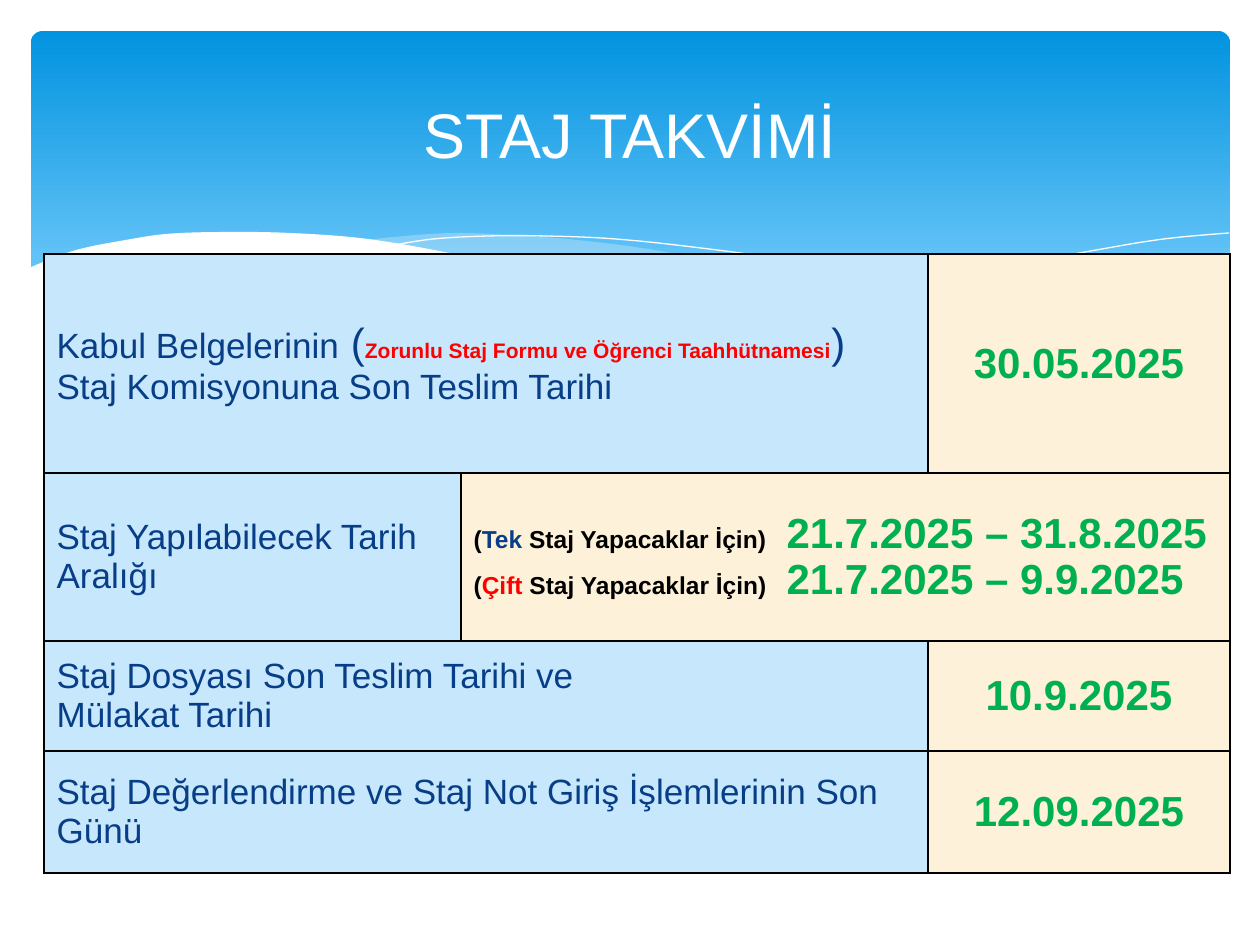
from lxml.etree import SubElement
from pptx import Presentation
from pptx.dml.color import RGBColor
from pptx.enum.shapes import MSO_SHAPE as Shape
from pptx.enum.text import MSO_ANCHOR as Anchor, PP_ALIGN as Align
from pptx.oxml import parse_xml
from pptx.oxml.ns import nsdecls, qn
from pptx.util import Emu, Pt

PX_PER_INCH = 126
FONT = "Arial"
COLORS = {
    "white": "FFFFFF", "black": "000000", "navy": "073E87", "red": "FF0000",
    "green": "00B050", "pale_blue": "C6E7FC", "cream": "FDF2D9",
    "sky_top": "0293E0", "sky_bottom": "83D3FE",
}

RIGHT_WAVE = [
    [(1229, 252), (1160, 265), (1085, 281), (982, 305), (833, 334)],
    [(833, 334), (906, 343), (984, 349), (1063, 349), (1130, 340), (1187, 326), (1229, 311)],
]
MIDDLE_WAVE = [
    [(1125, 344), (1017, 328), (934, 311), (793, 280), (717, 262), (648, 249),
     (586, 241), (529, 236), (455, 233), (394, 237), (360, 241)],
    [(360, 241), (431, 251), (509, 266), (619, 292), (736, 318), (838, 335),
     (927, 346), (1017, 350), (1080, 349), (1125, 344)],
]
LEFT_LINE = [[(389, 246), (433, 239), (488, 236), (546, 236), (616, 239), (701, 248),
              (801, 262), (916, 285), (1047, 316), (1143, 343)]]
RIGHT_LINE = [[(772, 324), (876, 296), (978, 272), (1091, 251), (1164, 239), (1229, 233)]]
WHITE_WAVE = [
    [(1231, 310), (1184, 326), (1133, 339), (1071, 347), (999, 348), (915, 343),
     (816, 330), (699, 309), (563, 277), (460, 255), (368, 239), (290, 233),
     (223, 232), (166, 234), (120, 241), (84, 248), (58, 256), (29, 268)],
    [(29, 415), (1231, 415)],
]

COLUMN_WIDTHS = [417, 467, 302]
ROW_HEIGHTS = [219, 168, 110, 122]


def px(value):
    return Emu(round(value * 914400 / PX_PER_INCH))


def color(name):
    return RGBColor.from_string(COLORS[name])


def label(text):
    return (text, 20, "navy", False)


def date(text):
    return (text, 24, "green", True)


def period(kind, kind_color, dates):
    return [("(", 14, "black", True), (kind, 14, kind_color, True),
            (" Staj Yapacaklar İçin)", 14, "black", True), date("\t" + dates)]


def smooth_curve(points, steps=6):
    padded = [points[0], *points, points[-1]]
    curve = [points[0]]
    for a, b, c, d in zip(padded, padded[1:], padded[2:], padded[3:]):
        for step in range(1, steps + 1):
            t = step / steps
            curve.append(tuple(
                0.5 * (2 * q + (r - p) * t + (2 * p - 5 * q + 4 * r - s) * t ** 2
                       + (3 * q - p - 3 * r + s) * t ** 3)
                for p, q, r, s in zip(a, b, c, d)))
    return curve


def add_curve(slide, parts, fill=None, opacity=100):
    points = [(px(x), px(y)) for part in parts for x, y in smooth_curve(part)]
    builder = slide.shapes.build_freeform(*points[0], scale=1)
    builder.add_line_segments(points[1:], close=fill is not None)
    shape = builder.convert_to_shape()
    shape.shadow.inherit = False
    if fill is None:
        shape.fill.background()
        shape.line.color.rgb = color("white")
        shape.line.width = Pt(0)
        return
    shape.line.fill.background()
    shape.fill.solid()
    shape.fill.fore_color.rgb = color(fill)
    if opacity < 100:
        srgb = next(shape.element.spPr.iter(qn("a:srgbClr")))
        SubElement(srgb, qn("a:alpha")).set("val", str(opacity * 1000))


def add_banner(slide):
    banner = slide.shapes.add_shape(Shape.ROUNDED_RECTANGLE, px(31), px(31), px(1199), px(340))
    banner.adjustments[0] = 0.034
    banner.shadow.inherit = False
    banner.line.fill.background()
    banner.fill.gradient()
    banner.fill.gradient_angle = 270
    stops = zip(banner.fill.gradient_stops, ("sky_top", "sky_bottom"), (0, 0.9))
    for stop, name, position in stops:
        stop.color.rgb = color(name)
        stop.position = position


def write_runs(paragraph, runs):
    for text, size, name, bold in runs:
        run = paragraph.add_run()
        run.text = text
        run.font.name = FONT
        run.font.size = Pt(size)
        run.font.bold = bold
        run.font.color.rgb = color(name)


def add_title(slide, text):
    box = slide.shapes.add_textbox(px(63), px(47), px(1134), px(173))
    frame = box.text_frame
    frame.word_wrap = True
    frame.vertical_anchor = Anchor.MIDDLE
    paragraph = frame.paragraphs[0]
    paragraph.alignment = Align.CENTER
    write_runs(paragraph, [(text, 36, "white", False)])


def set_borders(cell):
    properties = cell._tc.get_or_add_tcPr()
    for index, side in enumerate("LRTB"):
        properties.insert(index, parse_xml(
            f'<a:ln{side} {nsdecls("a")} w="{Pt(1)}"><a:solidFill>'
            f'<a:srgbClr val="{COLORS["black"]}"/></a:solidFill></a:ln{side}>'))


def set_tab_stop(paragraph, position):
    tabs = SubElement(paragraph._p.get_or_add_pPr(), qn("a:tabLst"))
    SubElement(tabs, qn("a:tab"), pos=str(px(position)), algn="l")


def fill_cell(cell, paragraphs, fill, alignment=Align.LEFT, tab=None):
    cell.vertical_anchor = Anchor.MIDDLE
    frame = cell.text_frame
    for index, runs in enumerate(paragraphs):
        paragraph = frame.add_paragraph() if index else frame.paragraphs[0]
        paragraph.alignment = alignment
        if tab:
            set_tab_stop(paragraph, tab)
        write_runs(paragraph, runs)
    cell.fill.solid()
    cell.fill.fore_color.rgb = color(fill)


def add_calendar(slide):
    table = slide.shapes.add_table(
        len(ROW_HEIGHTS), len(COLUMN_WIDTHS), px(44), px(254),
        px(sum(COLUMN_WIDTHS)), px(sum(ROW_HEIGHTS))).table
    table.first_row = table.horz_banding = False
    for column, width in zip(table.columns, COLUMN_WIDTHS):
        column.width = px(width)
    for row, height in zip(table.rows, ROW_HEIGHTS):
        row.height = px(height)

    deadlines = {
        0: ([[label("Kabul Belgelerinin"), (" (", 24, "navy", False),
              ("Zorunlu Staj Formu ve Öğrenci Taahhütnamesi", 12, "red", True),
              (") ", 24, "navy", False), label("Staj Komisyonuna Son Teslim Tarihi")]],
            "30.05.2025"),
        2: ([[label("Staj Dosyası Son Teslim Tarihi ve")], [label("Mülakat Tarihi")]],
            "10.9.2025"),
        3: ([[label("Staj Değerlendirme ve Staj Not Giriş İşlemlerinin Son Günü")]],
            "12.09.2025"),
    }
    for row, (paragraphs, day) in deadlines.items():
        table.cell(row, 0).merge(table.cell(row, 1))
        fill_cell(table.cell(row, 0), paragraphs, "pale_blue")
        fill_cell(table.cell(row, 2), [[date(day)]], "cream", Align.CENTER)

    table.cell(1, 1).merge(table.cell(1, 2))
    fill_cell(table.cell(1, 0), [[label("Staj Yapılabilecek Tarih Aralığı")]], "pale_blue")
    fill_cell(table.cell(1, 1), [period("Tek", "navy", "21.7.2025 – 31.8.2025"),
                                 period("Çift", "red", "21.7.2025 – 9.9.2025")],
              "cream", tab=313)
    for cell in table.iter_cells():
        set_borders(cell)


def main():
    presentation = Presentation()
    presentation.slide_width, presentation.slide_height = px(1260), px(945)
    slide = presentation.slides.add_slide(presentation.slide_layouts[6])
    add_banner(slide)
    add_curve(slide, RIGHT_WAVE, "pale_blue", 29)
    add_curve(slide, MIDDLE_WAVE, "pale_blue", 40)
    add_curve(slide, LEFT_LINE)
    add_curve(slide, RIGHT_LINE)
    add_curve(slide, WHITE_WAVE, "white")
    add_calendar(slide)
    add_title(slide, "STAJ TAKVİMİ")
    presentation.save("out.pptx")


if __name__ == "__main__":
    main()
